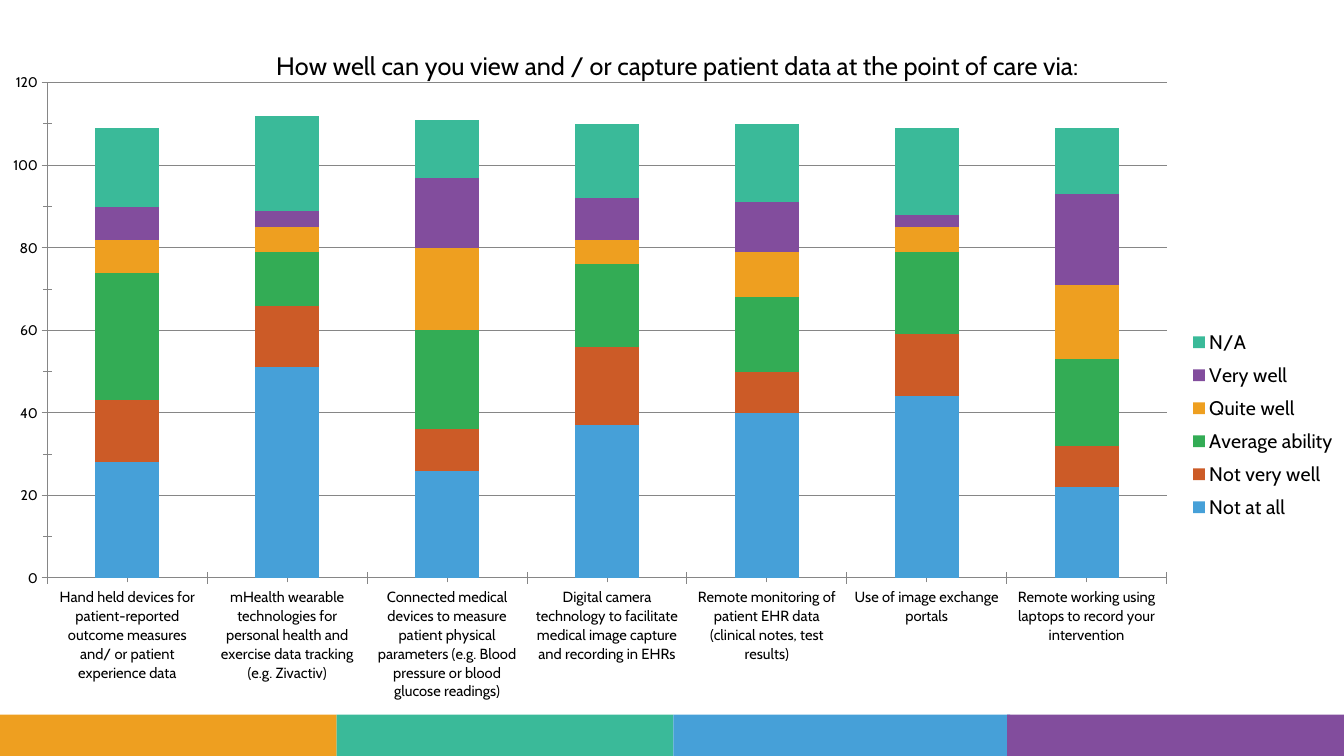
from pptx import Presentation
from pptx.chart.data import CategoryChartData
from pptx.dml.color import RGBColor
from pptx.enum.chart import XL_CHART_TYPE, XL_LEGEND_POSITION, XL_TICK_MARK
from pptx.enum.shapes import MSO_SHAPE
from pptx.oxml import parse_xml
from pptx.oxml.ns import nsdecls, qn
from pptx.util import Inches, Pt

STACKED = XL_CHART_TYPE.COLUMN_STACKED
LEGEND_RIGHT = XL_LEGEND_POSITION.RIGHT
CROSS = XL_TICK_MARK.CROSS
RECTANGLE = MSO_SHAPE.RECTANGLE

FONT = "Cabin"
COLORS = {
    "blue": "46A0D8",
    "rust": "CC5B27",
    "green": "33AC55",
    "amber": "EE9F20",
    "purple": "824D9D",
    "teal": "3ABA99",
    "text": "000000",
    "line": "868686",
}
TITLE = "How well can you view and / or capture patient data at the point of care via:"
CATEGORIES = [
    "Hand held devices for patient-reported outcome measures and/ or patient experience data",
    "mHealth wearable technologies for personal health and exercise data tracking (e.g. Zivactiv)",
    "Connected medical devices to measure patient physical parameters (e.g. Blood pressure or blood glucose readings)",
    "Digital camera technology to facilitate medical image capture and recording in EHRs",
    "Remote monitoring of patient EHR data (clinical notes, test results)",
    "Use of image exchange portals",
    "Remote working using laptops to record your intervention",
]
RATINGS = [
    ("Not at all", "blue", [28, 51, 26, 37, 40, 44, 22]),
    ("Not very well", "rust", [15, 15, 10, 19, 10, 15, 10]),
    ("Average ability", "green", [31, 13, 24, 20, 18, 20, 21]),
    ("Quite well", "amber", [8, 6, 20, 6, 11, 6, 18]),
    ("Very well", "purple", [8, 4, 17, 10, 12, 3, 22]),
    ("N/A", "teal", [19, 23, 14, 18, 19, 21, 16]),
]
FOOTER = [(0, "amber"), (3.34, "teal"), (6.68, "blue"), (9.99, "purple")]


def color(name):
    return RGBColor.from_string(COLORS[name])


def place(element, index, target="", **fractions):
    for old in element.findall(qn("c:layout")):
        element.remove(old)
    modes = "".join(f'<c:{axis}Mode val="edge"/>' for axis in "xy")
    sizes = "".join(f'<c:{key} val="{value}"/>' for key, value in fractions.items())
    element.insert(index, parse_xml(
        f'<c:layout {nsdecls("c")}><c:manualLayout>{target}{modes}{sizes}'
        "</c:manualLayout></c:layout>"))


deck = Presentation()
deck.slide_width = Inches(13.33)
deck.slide_height = Inches(7.5)
page = deck.slides.add_slide(deck.slide_layouts[6])

for left, name in FOOTER:
    band = page.shapes.add_shape(
        RECTANGLE, Inches(left), Inches(7.09), Inches(3.34), Inches(0.41))
    band.shadow.inherit = False
    band.fill.solid()
    band.fill.fore_color.rgb = color(name)
    band.line.fill.background()

data = CategoryChartData()
data.categories = CATEGORIES
for name, _, values in RATINGS:
    data.add_series(name, values)
chart = page.shapes.add_chart(
    STACKED, Inches(0), Inches(0.22), Inches(13.47), Inches(7.07), data).chart
chart.font.name = FONT
chart.font.size = Pt(10)
chart.font.color.rgb = color("text")

plot = chart.plots[0]
plot.gap_width = 150
plot.overlap = 100
plot.vary_by_categories = False
for series, (_, name, _) in zip(plot.series, RATINGS):
    series.format.fill.solid()
    series.format.fill.fore_color.rgb = color(name)

for axis, size in ((chart.category_axis, 10.5), (chart.value_axis, 10)):
    axis.major_tick_mark = CROSS
    axis.minor_tick_mark = CROSS
    axis.format.line.color.rgb = color("line")
    axis.format.line.width = Pt(0.75)
    axis.tick_labels.font.size = Pt(size)
    axis.tick_labels.font.name = FONT
    axis.tick_labels.font.color.rgb = color("text")

values_axis = chart.value_axis
values_axis.minimum_scale = 0
values_axis.maximum_scale = 120
values_axis.major_unit = 20
values_axis.minor_unit = 10
values_axis.has_major_gridlines = True
values_axis.major_gridlines.format.line.color.rgb = color("line")
values_axis.major_gridlines.format.line.width = Pt(0.75)

chart.has_title = True
title = chart.chart_title
title.include_in_layout = False
para = title.text_frame.paragraphs[0]
para.text = TITLE
span = para.runs[0]
span.font.name = FONT
span.font.size = Pt(18)
span.font.bold = False
span.font.color.rgb = color("text")

chart.has_legend = True
legend = chart.legend
legend.position = LEGEND_RIGHT
legend.include_in_layout = False
legend.font.name = FONT
legend.font.size = Pt(14)
legend.font.color.rgb = color("text")

plot_area = chart.element.find(".//" + qn("c:plotArea"))
title_part = chart.element.find(".//" + qn("c:title"))
legend_part = chart.element.find(".//" + qn("c:legend"))
place(plot_area, 0, '<c:layoutTarget val="inner"/>', x=0.035, y=0.085, w=0.824, h=0.695)
place(title_part, 1, x=0.2, y=0.03)
place(legend_part, 1, x=0.87, y=0.42, w=0.12, h=0.29)

deck.save("out.pptx")
